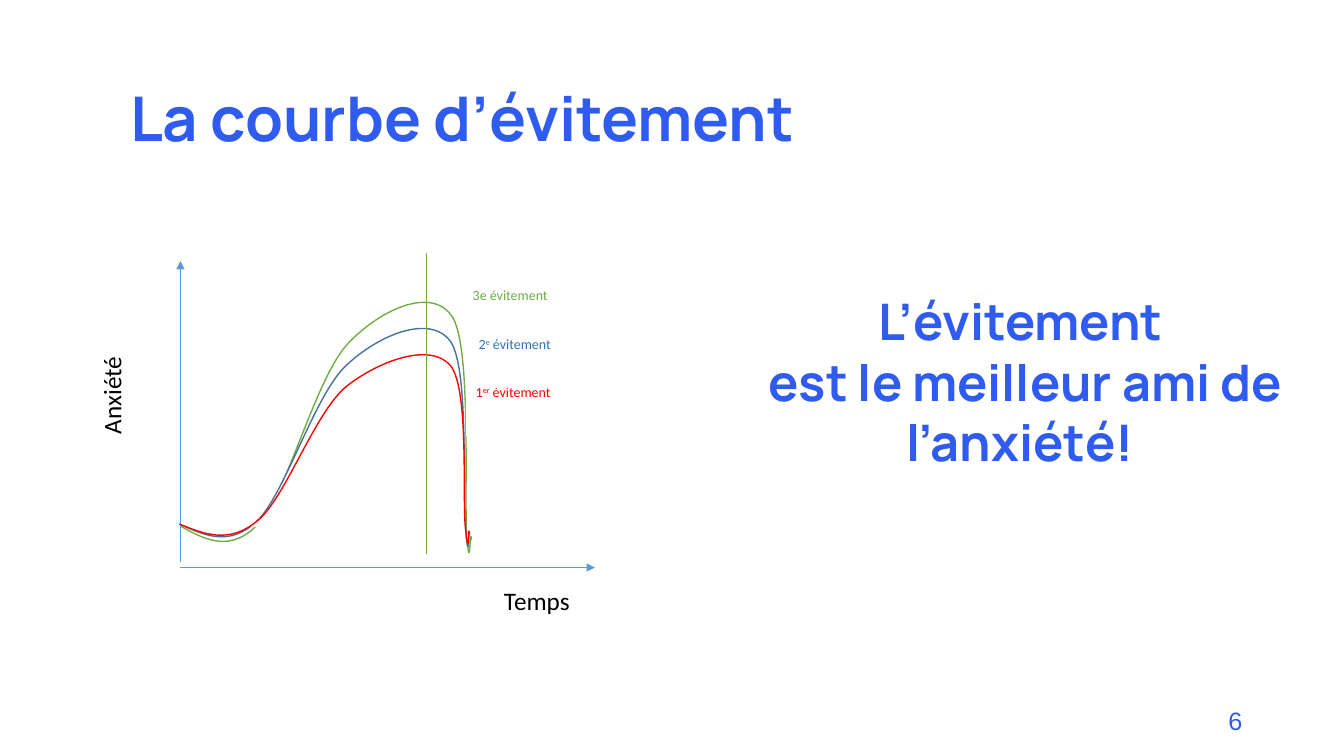
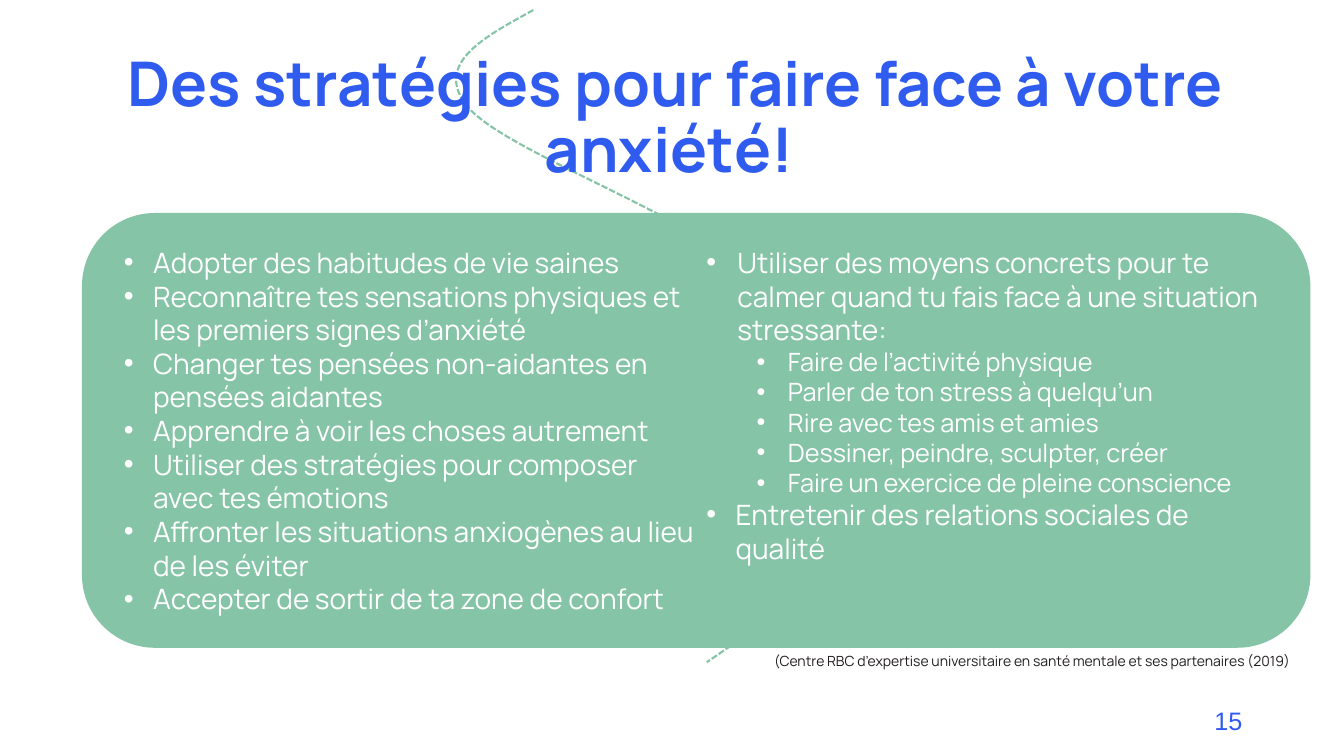
from lxml import etree
from pptx import Presentation
from pptx.dml.color import RGBColor
from pptx.enum import dml, shapes, text
from pptx.oxml import ns
from pptx.util import Inches, Pt

BLUE = RGBColor(0x2F, 0x5C, 0xEE)
MINT = RGBColor(0x86, 0xC4, 0xA7)
WHITE = RGBColor(0xFF, 0xFF, 0xFF)
BLACK = RGBColor(0, 0, 0)
INK = RGBColor(0x21, 0x1D, 0x1E)
GREEN = RGBColor(0x70, 0xAD, 0x47)
STEEL = RGBColor(0x43, 0x73, 0x9E)
NAVY = RGBColor(0x2E, 0x75, 0xB6)
RED = RGBColor(0xFF, 0, 0)
SKY = RGBColor(0x5B, 0x9B, 0xD5)

LEFT, MID, RIGHT = text.PP_ALIGN.LEFT, text.PP_ALIGN.CENTER, text.PP_ALIGN.RIGHT
TOP, CENTER = text.MSO_ANCHOR.TOP, text.MSO_ANCHOR.MIDDLE


def write(frame, *lines, size=18, color=BLUE, font="Manrope", bold=False,
          align=LEFT, anchor=TOP, pitch=None):
    frame.word_wrap = True
    frame.auto_size = text.MSO_AUTO_SIZE.NONE
    frame.vertical_anchor = anchor
    for i, line in enumerate(lines):
        para = frame.add_paragraph() if i else frame.paragraphs[0]
        para.alignment = align
        para.line_spacing = pitch
        for j, part in enumerate(line.split("^")):
            run = para.add_run()
            run.text = part
            run.font.size = Pt(size)
            run.font.name = font
            run.font.bold = bold
            run.font.color.rgb = color
            if j % 2:
                run._r.get_or_add_rPr().set("baseline", "30000")


def bullet(para, left, hang):
    props = para._p.get_or_add_pPr()
    props.set("marL", str(Inches(left)))
    props.set("indent", str(Inches(-hang)))
    etree.SubElement(props, ns.qn("a:buFont")).set("typeface", "Arial")
    etree.SubElement(props, ns.qn("a:buChar")).set("char", "•")


class Deck:
    def __init__(self):
        self.show = Presentation()
        self.show.slide_width = Inches(13.33)
        self.show.slide_height = Inches(7.5)

    def slide(self, title, box, number, align=LEFT):
        self.page = self.show.slides.add_slide(self.show.slide_layouts[5])
        self.pen = self.page.shapes
        head = self.pen.title
        head.left, head.top, head.width, head.height = map(Inches, box)
        write(head.text_frame, title, size=44, bold=True, align=align,
              anchor=CENTER, pitch=0.9)
        self.label((9.42, 6.95, 3, 0.4), number, font="Arial", align=RIGHT)

    def group(self):
        self.pen = self.page.shapes.add_group_shape().shapes

    def ungroup(self):
        self.pen = self.page.shapes

    def label(self, box, *lines, **style):
        write(self.pen.add_textbox(*map(Inches, box)).text_frame, *lines, **style)

    def block(self, box, fill, kind=shapes.MSO_SHAPE.RECTANGLE):
        form = self.pen.add_shape(kind, *map(Inches, box))
        form.shadow.inherit = False
        form.fill.solid()
        form.fill.fore_color.rgb = fill
        form.line.fill.background()
        return form

    def tag(self, box, words, turn=0, **style):
        form = self.block(box, WHITE)
        form.rotation = turn
        write(form.text_frame, words, font="Calibri", **style)

    def line(self, start, end, color, arrow=False):
        link = self.pen.add_connector(shapes.MSO_CONNECTOR.STRAIGHT,
                                      *map(Inches, start + end))
        link.line.color.rgb = color
        link.line.width = Pt(0.5)
        if arrow:
            tip = etree.SubElement(link.line._get_or_add_ln(), ns.qn("a:tailEnd"))
            tip.set("type", "triangle")
        etree.SubElement(link._element.spPr, ns.qn("a:effectLst"))

    def curve(self, points, color, width=1, fill=None):
        spots = [(Inches(x), Inches(y)) for x, y in points]
        pen = self.pen.build_freeform(*spots[0])
        pen.add_line_segments(spots[1:], close=False)
        form = pen.convert_to_shape()
        trail = form._element.find(".//" + ns.qn("a:path"))
        steps = trail.findall(ns.qn("a:lnTo"))
        for i in range(0, len(steps), 3):
            bend = etree.SubElement(trail, ns.qn("a:cubicBezTo"))
            for step in steps[i:i + 3]:
                bend.append(step[0])
                trail.remove(step)
        form.shadow.inherit = False
        form.line.color.rgb = color
        form.line.width = Pt(width)
        if fill is None:
            form.fill.background()
        else:
            form.fill.solid()
            form.fill.fore_color.rgb = fill
        return form


THIRD = [(1.79, 5.22), (2.04, 5.36), (2.29, 5.49), (2.57, 5.19),
         (2.85, 4.89), (3.13, 3.75), (3.45, 3.41),
         (3.77, 3.07), (4.29, 2.83), (4.49, 3.15),
         (4.68, 3.47), (4.6, 4.96), (4.63, 5.32),
         (4.66, 5.69), (4.66, 5.32), (4.67, 5.32),
         (4.68, 5.33), (4.67, 5.34), (4.67, 5.36)]
SECOND = [(1.78, 5.2), (2.03, 5.31), (2.27, 5.43), (2.55, 5.17),
          (2.83, 4.9), (3.12, 3.91), (3.44, 3.62),
          (3.76, 3.32), (4.27, 3.11), (4.47, 3.39),
          (4.66, 3.67), (4.58, 4.97), (4.62, 5.28),
          (4.65, 5.6), (4.65, 5.28), (4.65, 5.28),
          (4.66, 5.29), (4.66, 5.3), (4.65, 5.31)]
FIRST = [(1.78, 5.2), (2.03, 5.3), (2.27, 5.4), (2.55, 5.17),
         (2.83, 4.95), (3.12, 4.09), (3.44, 3.83),
         (3.76, 3.58), (4.27, 3.39), (4.47, 3.63),
         (4.66, 3.87), (4.58, 5), (4.62, 5.27),
         (4.65, 5.55), (4.65, 5.27), (4.65, 5.27),
         (4.66, 5.28), (4.66, 5.29), (4.65, 5.3)]
SWIRL = [(5.29, 0.1), (4.8, 0.37), (4.3, 0.63), (4.63, 1.05),
         (4.96, 1.46), (6.53, 2.02), (7.29, 2.58),
         (8.05, 3.15), (9.24, 3.78), (9.19, 4.44),
         (9.15, 5.11), (8.08, 5.84), (7.01, 6.57)]

HABITS = [
    "Adopter des habitudes de vie saines",
    "Reconnaître tes sensations physiques et les premiers signes d’anxiété",
    "Changer tes pensées non-aidantes en pensées aidantes",
    "Apprendre à voir les choses autrement",
    "Utiliser des stratégies pour composer avec tes émotions",
    "Affronter les situations anxiogènes au lieu de les éviter",
    "Accepter de sortir de ta zone de confort",
]
MEANS = ("Utiliser des moyens concrets pour te calmer quand tu fais face "
         "à une situation stressante:")
ACTS = [
    "Faire de l’activité physique",
    "Parler de ton stress à quelqu’un",
    "Rire avec tes amis et amies",
    "Dessiner, peindre, sculpter, créer",
    "Faire un exercice de pleine conscience",
]
BONDS = "Entretenir des relations sociales de qualité"


def avoid(deck):
    deck.slide("La courbe d’évitement", (1.19, 0.48, 11.5, 1.45), "6")
    deck.group()
    deck.curve(THIRD, GREEN, fill=WHITE)
    deck.line((1.79, 5.63), (5.9, 5.63), SKY, arrow=True)
    deck.line((1.79, 5.58), (1.79, 2.59), SKY, arrow=True)
    deck.tag((4.62, 3.76, 2.54, 0.57), "1^er^ évitement", size=10, color=RED)
    deck.tag((-0.09, 2.61, 2.79, 0.8), "Anxiété", turn=270, color=BLACK)
    deck.tag((4.9, 5.76, 2.85, 0.72), "Temps", color=BLACK)
    deck.curve(SECOND, STEEL, fill=WHITE)
    deck.curve(FIRST, RED, fill=WHITE)
    deck.tag((4.65, 3.28, 2.54, 0.57), "2^e^ évitement", size=10, color=NAVY)
    deck.tag((4.59, 2.79, 2.54, 0.48), "3e évitement", size=10, color=GREEN)
    deck.line((4.23, 2.51), (4.23, 5.5), GREEN)
    deck.ungroup()
    deck.label((7.15, 2.83, 6.04, 1.92), "L’évitement ",
               "est le meilleur ami de l’anxiété! ", size=36, bold=True, align=MID)


def cope(deck):
    deck.slide("Des stratégies pour faire face à votre anxiété! ",
               (0.27, 0.46, 12.86, 1.45), "15", align=MID)
    swirl = deck.curve(SWIRL, MINT, width=1.5)
    swirl.line.dash_style = dml.MSO_LINE.SQUARE_DOT
    deck.page.shapes._spTree.insert(2, swirl._element)

    panel = deck.block((0.82, 2.12, 12.17, 4.3), MINT,
                       shapes.MSO_SHAPE.ROUNDED_RECTANGLE)
    panel.line.color.rgb = MINT
    panel.line.width = Pt(1)
    frame = panel.text_frame
    write(frame, *HABITS, MEANS, *ACTS, BONDS, size=20, color=WHITE, anchor=CENTER)
    frame._txBody.bodyPr.set("numCol", "2")
    for para in frame.paragraphs:
        if para.text in ACTS:
            para.level = 1
            para.runs[0].font.size = Pt(18)
            bullet(para, 0.91, 0.31)
        elif para.text == MEANS:
            bullet(para, 0.41, 0.31)
        else:
            bullet(para, 0.39, 0.29)

    deck.label((7.58, 6.42, 5.75, 0.27),
               "(Centre RBC d’expertise universitaire en santé mentale "
               "et ses partenaires (2019) ", size=10, color=INK)


def main():
    deck = Deck()
    avoid(deck)
    cope(deck)
    deck.show.save("out.pptx")


if __name__ == "__main__":
    main()
